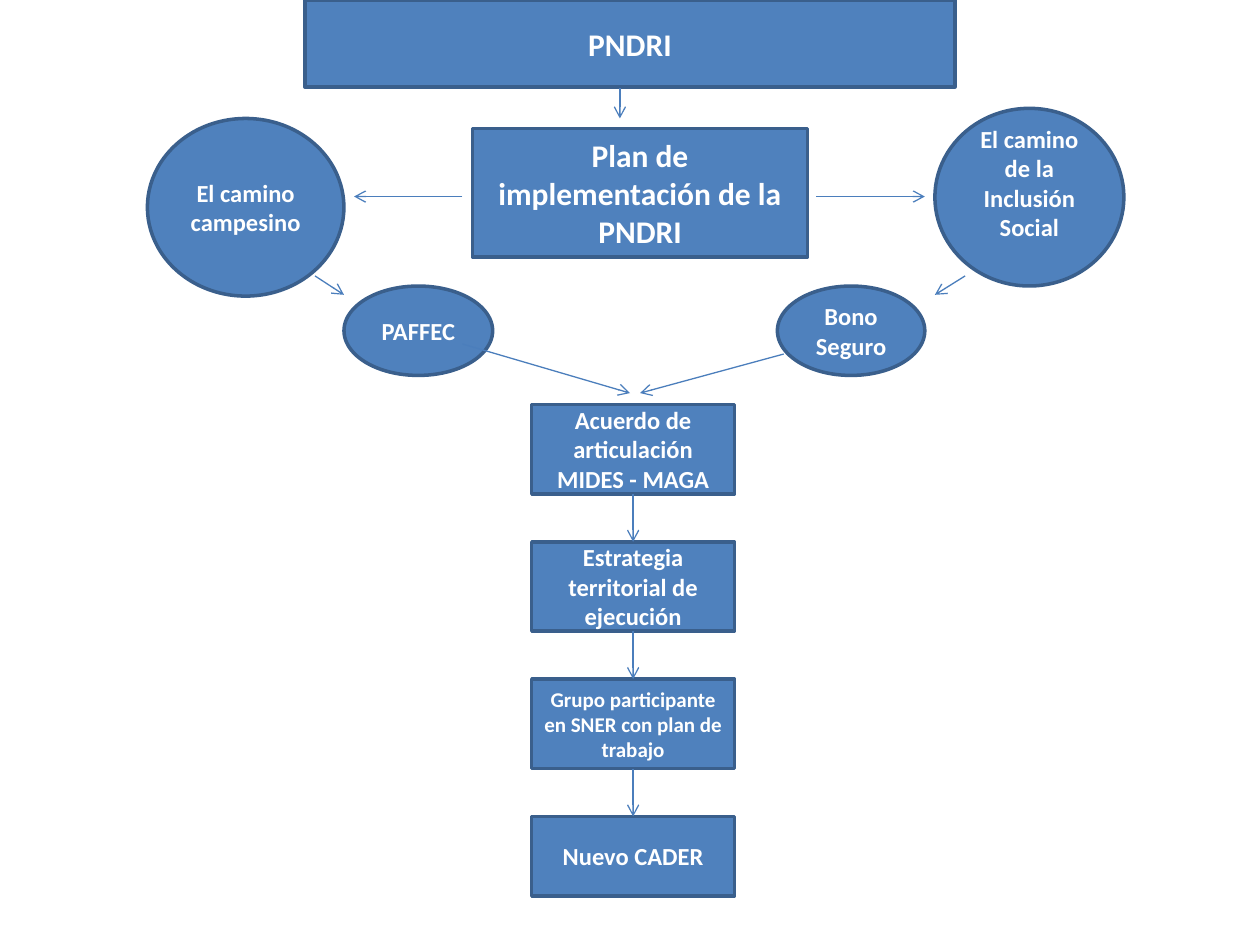
from lxml import etree
from pptx import Presentation
from pptx.dml.color import RGBColor
from pptx.enum.shapes import MSO_CONNECTOR, MSO_SHAPE
from pptx.enum.text import MSO_ANCHOR, PP_ALIGN
from pptx.oxml.ns import qn
from pptx.util import Inches, Pt

presentation = Presentation()
presentation.slide_width = Inches(10)
presentation.slide_height = Inches(7.5)
slide = presentation.slides.add_slide(presentation.slide_layouts[6])


def color(hex_string):
    return RGBColor.from_string(hex_string)


def add_node(kind, left, top, width, height, text, size=14):
    shape = slide.shapes.add_shape(
        kind, Inches(left), Inches(top), Inches(width), Inches(height))
    shape.shadow.inherit = False
    shape.fill.solid()
    shape.fill.fore_color.rgb = color("4F81BD")
    shape.line.color.rgb = color("3A5F8C")
    shape.line.width = Pt(2)
    shape.text_frame.word_wrap = True
    shape.text_frame.vertical_anchor = MSO_ANCHOR.MIDDLE
    paragraph = shape.text_frame.paragraphs[0]
    paragraph.text = text
    paragraph.alignment = PP_ALIGN.CENTER
    paragraph.font.name = "Calibri"
    paragraph.font.size = Pt(size)
    paragraph.font.bold = True
    paragraph.font.color.rgb = color("FFFFFF")
    return shape


# Policy and its implementation plan
add_node(MSO_SHAPE.RECTANGLE, 2.42, 0, 5.16, 0.69, "PNDRI", 18)
add_node(MSO_SHAPE.RECTANGLE, 3.75, 1.02, 2.66, 1.02,
         "Plan de implementación de la PNDRI", 18)

# The two paths and their programmes
add_node(MSO_SHAPE.OVAL, 6.17, 2.27, 1.17, 0.71, "Bono Seguro")
add_node(MSO_SHAPE.OVAL, 2.73, 2.27, 1.18, 0.71, "PAFFEC")
add_node(MSO_SHAPE.OVAL, 1.17, 0.94, 1.56, 1.41, "El camino campesino")
inclusion = add_node(MSO_SHAPE.OVAL, 7.42, 0.86, 1.5, 1.41,
                     "El camino de la Inclusión Social")
inclusion.text_frame.margin_bottom = Inches(0.28)  # text sits above the middle

arrows = [
    (4.92, 0.7, 4.92, 0.94),
    (6.22, 2.81, 5.08, 3.12),
    (3.67, 2.73, 5, 3.12),
    (3.67, 1.56, 2.81, 1.56),
    (6.48, 1.56, 7.34, 1.56),
    (2.5, 2.19, 2.73, 2.34),
    (7.66, 2.19, 7.42, 2.34),
]

# Chain of steps, evenly spaced, each joined to the one above
steps = [
    ("Acuerdo de articulación MIDES - MAGA", 0.71, 14),
    ("Estrategia territorial de ejecución", 0.71, 14),
    ("Grupo participante en SNER con plan de trabajo", 0.71, 12),
    ("Nuevo CADER", 0.63, 14),
]
step_left, step_width, step_pitch = 4.22, 1.61, 1.09
step_center = step_left + step_width / 2
previous_bottom = None
for index, (text, height, size) in enumerate(steps):
    top = 3.21 + index * step_pitch
    add_node(MSO_SHAPE.RECTANGLE, step_left, top, step_width, height, text, size)
    if previous_bottom is not None:
        arrows.append((step_center, previous_bottom, step_center, top))
    previous_bottom = top + height

# Arrows
for ends in arrows:
    connector = slide.shapes.add_connector(
        MSO_CONNECTOR.STRAIGHT, *[Inches(value) for value in ends])
    connector.line.color.rgb = color("4B7EBC")
    connector.line.width = Pt(0.75)
    etree.SubElement(connector.line._get_or_add_ln(), qn("a:tailEnd"), type="arrow")
    etree.SubElement(connector._element.spPr, qn("a:effectLst"))

presentation.save("out.pptx")
